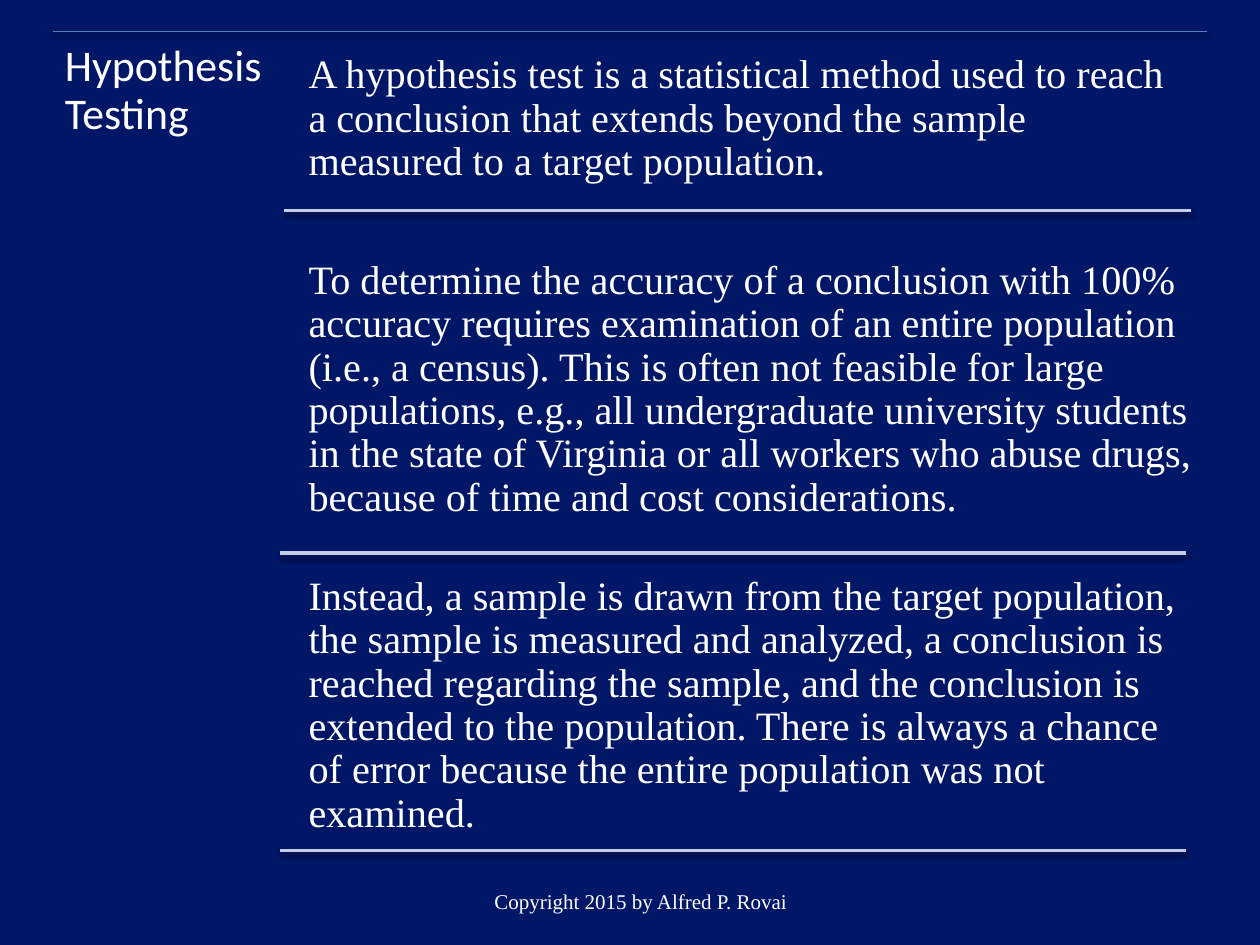
from lxml import etree
from pptx import Presentation, util as u
from pptx.dml.color import RGBColor
from pptx.enum import shapes, text
from pptx.oxml.ns import qn

COLORS = {"back": "001667", "text": "FFFFFF", "top": "4F81BD",
          "rule": "C2CDE1", "shadow": "000000"}
SERIF, SANS = "Times New Roman", "Calibri"

# Content: boxes are left, top, width, height in cm
TITLE = ("Hypothesis Testing", (1.06, 0.64, 4.57, 16.71))
SECTIONS = [
    ("A hypothesis test is a statistical method used to reach a conclusion that "
     "extends beyond the sample measured to a target population.",
     (5.97, 0.84, 17.93, 3.94)),
    ("To determine the accuracy of a conclusion with 100% accuracy requires "
     "examination of an entire population (i.e., a census). This is often not "
     "feasible for large populations, e.g., all undergraduate university students "
     "in the state of Virginia or all workers who abuse drugs, because of time and "
     "cost considerations.",
     (5.97, 4.98, 18.36, 6.17)),
    ("Instead, a sample is drawn from the target population, the sample is measured "
     "and analyzed, a conclusion is reached regarding the sample, and the conclusion "
     "is extended to the population. There is always a chance of error because the "
     "entire population was not examined.",
     (5.97, 11.35, 18.03, 5.79)),
]
FOOTER = ("Copyright 2015 by Alfred P. Rovai", (4.45, 17.65, 16.94, 1.02))
# Rules: left, right, y in cm, colour, width in pt, shadow opacity in %
RULES = [(1.06, 24.34, 0.64, "top", 0.75, 35),
         (5.72, 24.0, 4.24, "rule", 2, 38),
         (5.64, 23.9, 11.15, "rule", 2, 38),
         (5.64, 23.9, 17.15, "rule", 2, 38)]


def rgb(name):
    return RGBColor.from_string(COLORS[name])


def write(sp, content, box, font, size, spacing=0.9,
          align=text.PP_ALIGN.LEFT, anchor=text.MSO_ANCHOR.TOP):
    sp.left, sp.top, sp.width, sp.height = map(u.Cm, box)
    tf = sp.text_frame
    tf.text = content
    tf.word_wrap = True
    tf.auto_size = text.MSO_AUTO_SIZE.NONE
    tf.vertical_anchor = anchor
    tf.margin_left = tf.margin_right = tf.margin_top = tf.margin_bottom = u.Cm(0.25)
    p = tf.paragraphs[0]
    p.alignment, p.line_spacing = align, spacing
    r = p.runs[0]
    r.font.name, r.font.size = font, u.Pt(size)
    r.font.color.rgb = rgb("text")


def add_rule(s, left, right, y, color, width, opacity):
    line = s.shapes.add_connector(shapes.MSO_CONNECTOR.STRAIGHT,
                                  u.Cm(left), u.Cm(y), u.Cm(right), u.Cm(y))
    line.line.color.rgb, line.line.width = rgb(color), u.Pt(width)
    # Soft shadow straight below
    effects = etree.SubElement(line._element.spPr, qn("a:effectLst"))
    shadow = etree.SubElement(effects, qn("a:outerShdw"), blurRad=str(u.Pt(3.1)),
                              dist=str(u.Pt(1.7)), dir="5400000", rotWithShape="0")
    clr = etree.SubElement(shadow, qn("a:srgbClr"), val=COLORS["shadow"])
    etree.SubElement(clr, qn("a:alpha"), val=str(opacity * 1000))


def main():
    prs = Presentation()
    prs.slide_width, prs.slide_height = u.Cm(25.4), u.Cm(19.05)
    s = prs.slides.add_slide(prs.slide_layouts[5])
    s.background.fill.solid()
    s.background.fill.fore_color.rgb = rgb("back")

    # Rules, title column and text sections
    for rule in RULES:
        add_rule(s, *rule)
    write(s.shapes.title, *TITLE, SANS, 25)
    for content, box in SECTIONS:
        write(s.shapes.add_textbox(0, 0, 0, 0), content, box, SERIF, 23)

    # Footer
    write(s.shapes.add_textbox(0, 0, 0, 0), *FOOTER, SERIF, 12, 1,
          text.PP_ALIGN.CENTER, text.MSO_ANCHOR.MIDDLE)
    prs.save("out.pptx")


if __name__ == "__main__":
    main()
